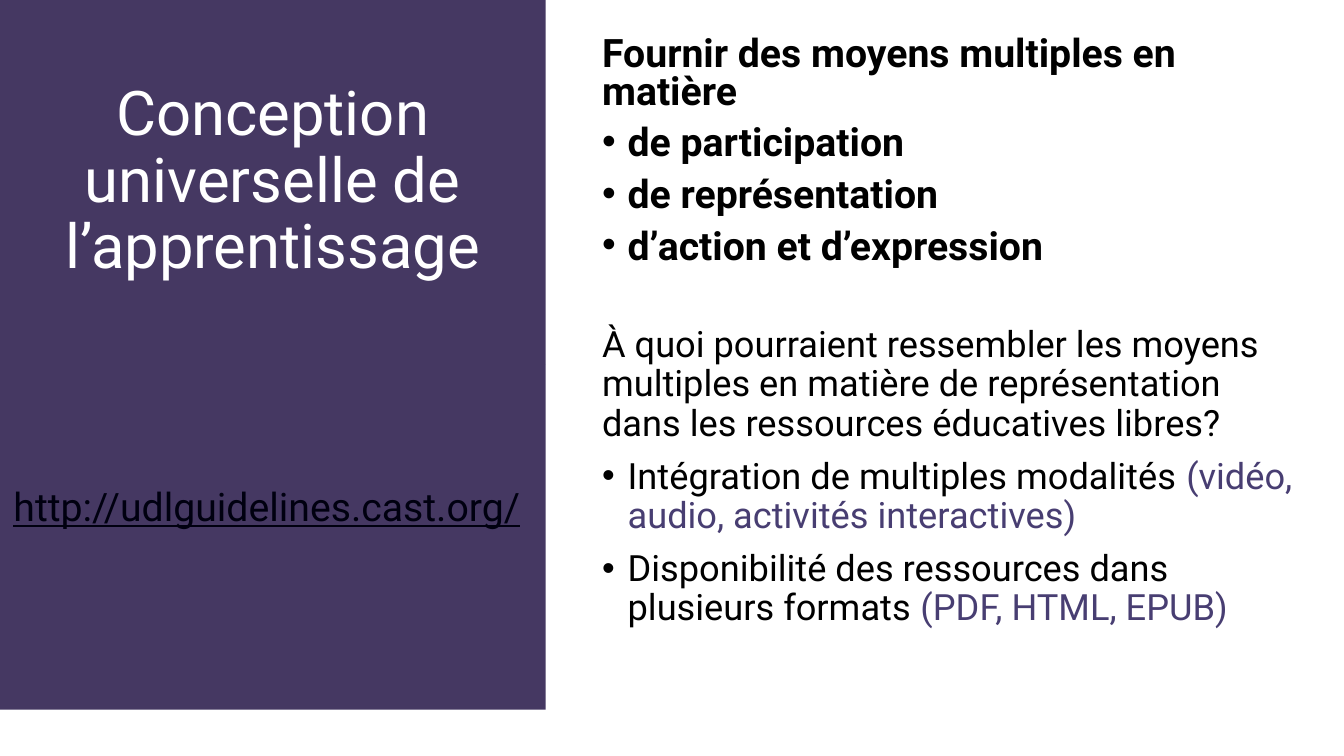
from dataclasses import dataclass

from lxml.etree import SubElement
from pptx import Presentation
from pptx.dml.color import RGBColor
from pptx.enum.text import MSO_ANCHOR, MSO_AUTO_SIZE, PP_ALIGN
from pptx.oxml.ns import qn
from pptx.util import Inches, Pt

COLORS = {
    "panel": "453862",
    "white": "FFFFFF",
    "text": "000000",
    "link": "000010",
    "example": "483E72",
}
FONT = "Roboto"
SLIDE_WIDTH = 10
SLIDE_HEIGHT = SLIDE_WIDTH * 9 / 16
PANEL_WIDTH, PANEL_SPLIT = 4.06, 2.71
LIST_LEFT, LIST_WIDTH = 4.38, 5.43
BULLET_INDENT = 0.19


@dataclass(frozen=True)
class Run:
    text: str
    color: str = "text"


@dataclass(frozen=True)
class Item:
    runs: tuple[Run, ...]
    bullet: bool = False


@dataclass(frozen=True)
class Block:
    placeholder: int
    box: tuple[float, float, float, float]
    items: tuple[Item, ...]
    size: float
    line_spacing: float = 0.9
    fill: str | None = None
    bold: bool = False
    underline: bool = False
    align: PP_ALIGN = PP_ALIGN.LEFT
    anchor: MSO_ANCHOR = MSO_ANCHOR.TOP
    margin_top: float = 0.05


BLOCKS = (
    Block(
        0, (0, 0, PANEL_WIDTH, PANEL_SPLIT),
        (Item((Run("Conception universelle de l’apprentissage", "white"),)),),
        size=33, fill="panel", align=PP_ALIGN.CENTER, anchor=MSO_ANCHOR.MIDDLE,
    ),
    Block(
        2, (LIST_LEFT, 0.23, LIST_WIDTH, 1.97),
        (
            Item((Run("Fournir des moyens multiples en matière"),)),
            Item((Run("de participation"),), bullet=True),
            Item((Run("de représentation"),), bullet=True),
            Item((Run("d’action et d’expression"),), bullet=True),
        ),
        size=21, line_spacing=0.8, bold=True,
    ),
    Block(
        1, (0, PANEL_SPLIT, PANEL_WIDTH, 2.57),
        (Item((Run("http://udlguidelines.cast.org/", "link"),)),),
        size=21, fill="panel", underline=True, margin_top=0.92,
    ),
    Block(
        4, (LIST_LEFT, 2.38, LIST_WIDTH, 2.35),
        (
            Item((Run("À quoi pourraient ressembler les moyens multiples en matière "
                      "de représentation dans les ressources éducatives libres?"),)),
            Item((Run("Intégration de multiples modalités "),
                  Run("(vidéo, audio, activités interactives)", "example")), bullet=True),
            Item((Run("Disponibilité des ressources dans plusieurs formats "),
                  Run("(PDF, HTML, EPUB)", "example")), bullet=True),
        ),
        size=19.4,
    ),
)


def apply_format(target: object, values: dict) -> None:
    for name, value in values.items():
        setattr(target, name, value)


def set_bullet(paragraph, bullet: bool) -> None:
    """Give the paragraph a hanging bullet, or clear the inherited one."""
    properties = paragraph._p.get_or_add_pPr()
    indent = Inches(BULLET_INDENT) if bullet else 0
    properties.set("marL", str(indent))
    properties.set("indent", str(-indent))
    if bullet:
        SubElement(properties, qn("a:buFont"), typeface="Arial")
        SubElement(properties, qn("a:buChar"), char="•")
    else:
        SubElement(properties, qn("a:buNone"))


def fill_block(shape, block: Block) -> None:
    left, top, width, height = map(Inches, block.box)
    apply_format(shape, {"left": left, "top": top, "width": width, "height": height})
    if block.fill:
        shape.fill.solid()
        shape.fill.fore_color.rgb = RGBColor.from_string(COLORS[block.fill])
    frame = shape.text_frame
    apply_format(frame, {
        "word_wrap": True,
        "auto_size": MSO_AUTO_SIZE.NONE,
        "vertical_anchor": block.anchor,
        "margin_top": Inches(block.margin_top),
    })
    for index, item in enumerate(block.items):
        paragraph = frame.add_paragraph() if index else frame.paragraphs[0]
        set_bullet(paragraph, item.bullet)
        apply_format(paragraph, {
            "alignment": block.align,
            "line_spacing": block.line_spacing,
            "space_before": Pt(7.5 if index else 0),
        })
        for part in item.runs:
            run = paragraph.add_run()
            run.text = part.text
            apply_format(run.font, {
                "name": FONT,
                "size": Pt(block.size),
                "bold": block.bold,
                "underline": block.underline,
            })
            run.font.color.rgb = RGBColor.from_string(COLORS[part.color])


def main() -> None:
    presentation = Presentation()
    presentation.slide_width = Inches(SLIDE_WIDTH)
    presentation.slide_height = Inches(SLIDE_HEIGHT)
    comparison_layout = presentation.slide_layouts[4]
    slide = presentation.slides.add_slide(comparison_layout)
    placeholders = {shape.placeholder_format.idx: shape for shape in slide.placeholders}
    for block in BLOCKS:
        fill_block(placeholders.pop(block.placeholder), block)
    for unused in placeholders.values():
        unused._element.getparent().remove(unused._element)
    presentation.save("out.pptx")


if __name__ == "__main__":
    main()
